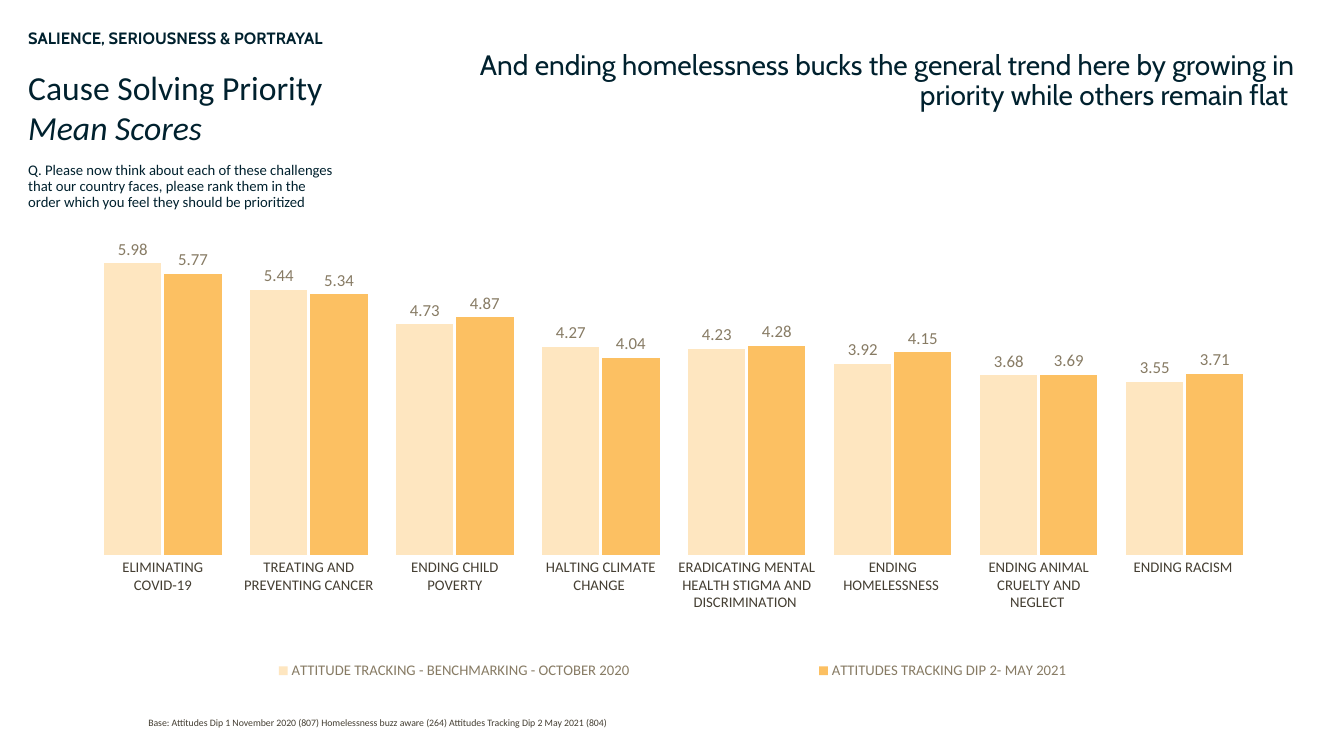
from pptx import Presentation
from pptx.chart.data import CategoryChartData
from pptx.dml.color import RGBColor
from pptx.enum.chart import XL_CHART_TYPE, XL_LABEL_POSITION, XL_LEGEND_POSITION, XL_TICK_MARK
from pptx.enum.text import MSO_ANCHOR, MSO_AUTO_SIZE, PP_ALIGN
from pptx.oxml import parse_xml
from pptx.oxml.ns import nsdecls, qn
from pptx.util import Inches, Pt

WIDTH, HEIGHT = Inches(13.33), Inches(7.5)
NAVY, BROWN, TAUPE = "00212E", "443E32", "877B64"
CAUSES = [
    "ELIMINATING COVID-19",
    "TREATING AND PREVENTING CANCER",
    "ENDING CHILD POVERTY",
    "HALTING CLIMATE CHANGE ",
    "ERADICATING MENTAL HEALTH STIGMA AND DISCRIMINATION ",
    "ENDING HOMELESSNESS ",
    "ENDING ANIMAL CRUELTY AND NEGLECT ",
    "ENDING RACISM ",
]
WAVES = [
    ("ATTITUDE TRACKING - BENCHMARKING - OCTOBER 2020", "FEE6C0",
     (5.98, 5.44, 4.73, 4.27, 4.23, 3.92, 3.68, 3.55)),
    ("ATTITUDES TRACKING DIP 2- MAY 2021 ", "FCC062",
     (5.77, 5.34, 4.87, 4.04, 4.28, 4.15, 3.69, 3.71)),
]


def color(value):
    return RGBColor.from_string(value)


def area(left, top, width, height):
    shares = ((left, WIDTH), (top, HEIGHT), (width, WIDTH), (height, HEIGHT))
    return [round(full * percent / 100) for percent, full in shares]


def style_font(font, name, size, value):
    font.name, font.size = name, Pt(size)
    font.color.rgb = color(value)


def fill_placeholder(box, place, text, name, size, value=NAVY, bold=False,
                     spacing=0.9, anchor=MSO_ANCHOR.TOP, align=PP_ALIGN.LEFT):
    box.left, box.top, box.width, box.height = area(*place)
    frame = box.text_frame
    frame.text = text
    frame.word_wrap = True
    frame.auto_size = MSO_AUTO_SIZE.NONE
    frame.vertical_anchor = anchor
    for para in frame.paragraphs:
        properties = para._p.get_or_add_pPr()
        properties.set("marL", "0")
        properties.set("indent", "0")
        properties.append(parse_xml(f"<a:buNone {nsdecls('a')}/>"))
        para.alignment = align
        para.line_spacing = spacing
        para.space_before = para.space_after = Pt(0)
        for span in para.runs:
            style_font(span.font, name, size, value)
            span.font.bold = bold
    return frame


def manual_layout(x, y, width, height, target=""):
    return parse_xml(
        f"<c:layout {nsdecls('c')}><c:manualLayout>{target}"
        '<c:xMode val="edge"/><c:yMode val="edge"/>'
        f'<c:x val="{x}"/><c:y val="{y}"/><c:w val="{width}"/><c:h val="{height}"/>'
        "</c:manualLayout></c:layout>")


def style_axes(chart):
    causes = chart.category_axis
    causes.major_tick_mark = XL_TICK_MARK.NONE
    causes.format.line.fill.background()
    style_font(causes.tick_labels.font, "Calibri", 10.5, BROWN)
    scores = chart.value_axis
    scores.minimum_scale, scores.maximum_scale, scores.major_unit = 0, 6.5, 0.3
    scores.has_major_gridlines = False
    scores.visible = False


def style_series(series, fill):
    series.format.fill.solid()
    series.format.fill.fore_color.rgb = color(fill)
    labels = series.data_labels
    labels.show_value = True
    labels.position = XL_LABEL_POSITION.OUTSIDE_END
    labels.number_format = "0.00"
    labels.number_format_is_linked = False
    style_font(labels.font, "Calibri", 12, TAUPE)


def style_legend(chart):
    chart.has_legend = True
    legend = chart.legend
    legend.position = XL_LEGEND_POSITION.BOTTOM
    legend.include_in_layout = False
    style_font(legend.font, "Calibri", 10.5, TAUPE)
    position = legend._element.find(qn("c:legendPos"))
    position.addnext(manual_layout(0.02, 0.9, 0.96, 0.08))


def place_plot(chart):
    plot_area = chart._chartSpace.chart.plotArea
    for layout in plot_area.findall(qn("c:layout")):
        plot_area.remove(layout)
    inner = '<c:layoutTarget val="inner"/>'
    plot_area.insert(0, manual_layout(0.016, 0.038, 0.967, 0.66, inner))


def add_score_chart(page, place):
    data = CategoryChartData(number_format="0.00")
    data.categories = CAUSES
    for name, _, scores in WAVES:
        data.add_series(name, scores)
    chart = page.shapes.add_chart(XL_CHART_TYPE.COLUMN_CLUSTERED, *area(*place), data).chart
    chart.has_title = False
    style_font(chart.font, "Cabin", 10, NAVY)
    plot = chart.plots[0]
    plot.gap_width, plot.overlap = 50, -5
    plot.vary_by_categories = False
    for series, (_, fill, _) in zip(plot.series, WAVES):
        style_series(series, fill)
    style_axes(chart)
    style_legend(chart)
    place_plot(chart)


def main():
    deck = Presentation()
    deck.slide_width, deck.slide_height = WIDTH, HEIGHT
    page = deck.slides.add_slide(deck.slide_layouts.get_by_name("Comparison"))
    section, heading, base, question, finding = list(page.placeholders)[:5]
    fill_placeholder(section, (1.35, 3.33, 27.83, 5.6),
                     "SALIENCE, SERIOUSNESS & PORTRAYAL", "Cabin", 11.7, bold=True)
    frame = fill_placeholder(heading, (1.35, 8.13, 24.76, 12.67),
                             "Cause Solving Priority\nMean Scores", "Calibri", 24, spacing=1.0)
    frame.paragraphs[1].runs[0].font.italic = True
    fill_placeholder(base, (10.28, 93.6, 44.79, 4.27),
                     "Base: Attitudes Dip 1 November 2020 (807) Homelessness buzz aware (264) "
                     "Attitudes Tracking Dip 2 May 2021 (804)",
                     "Calibri", 7, BROWN, anchor=MSO_ANCHOR.MIDDLE)
    fill_placeholder(question, (1.35, 22.53, 24.76, 4.27),
                     "Q. Please now think about each of these challenges that our country faces, "
                     "please rank them in the order which you feel they should be prioritized",
                     "Calibri", 10.5, anchor=MSO_ANCHOR.MIDDLE)
    fill_placeholder(finding, (31.66, 6.13, 65.42, 15.47),
                     "And ending homelessness bucks the general trend here by growing in "
                     "priority while others remain flat ",
                     "Cabin", 20, align=PP_ALIGN.RIGHT)
    add_score_chart(page, (5.25, 29.07, 89.87, 63.47))
    deck.save("out.pptx")


if __name__ == "__main__":
    main()
